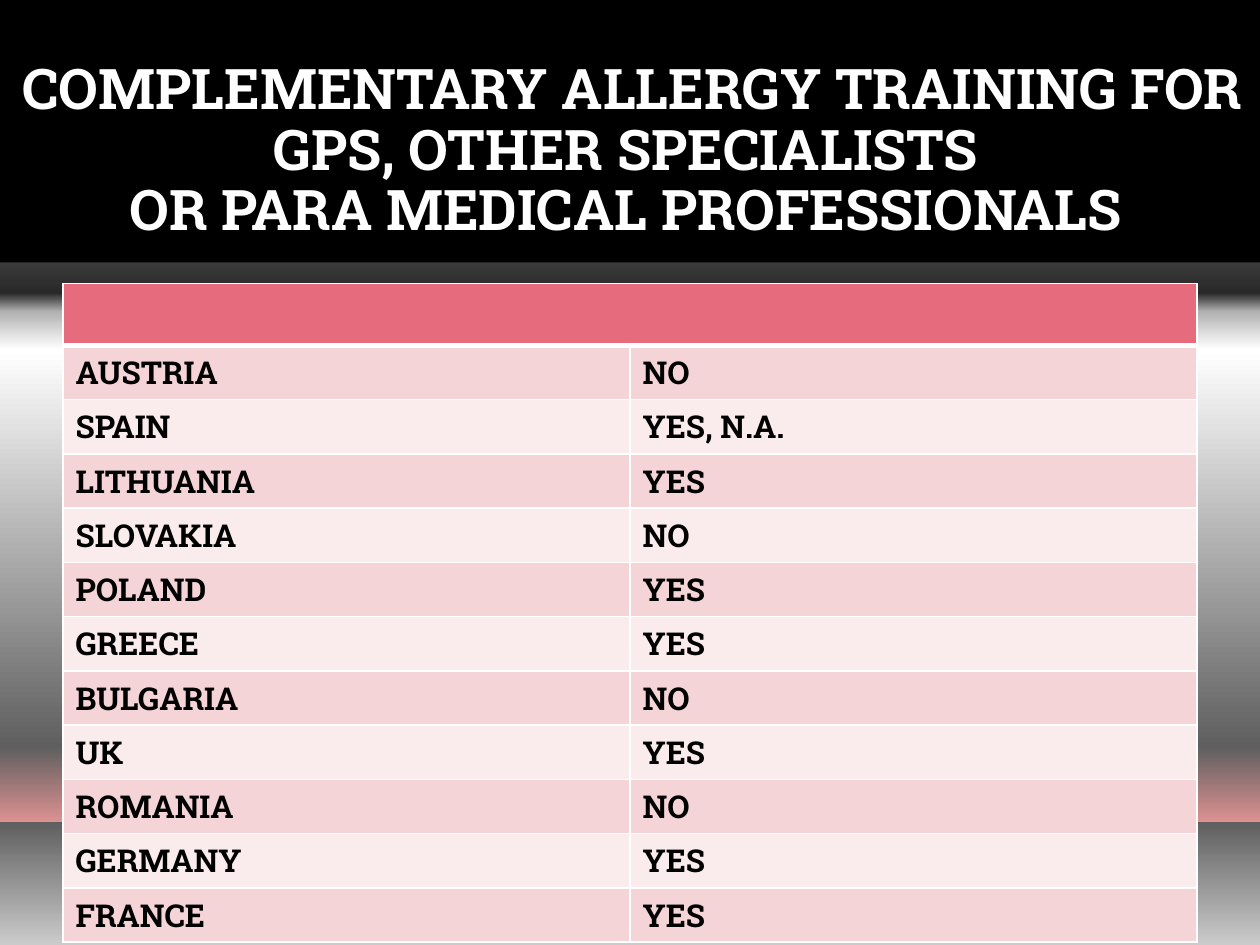
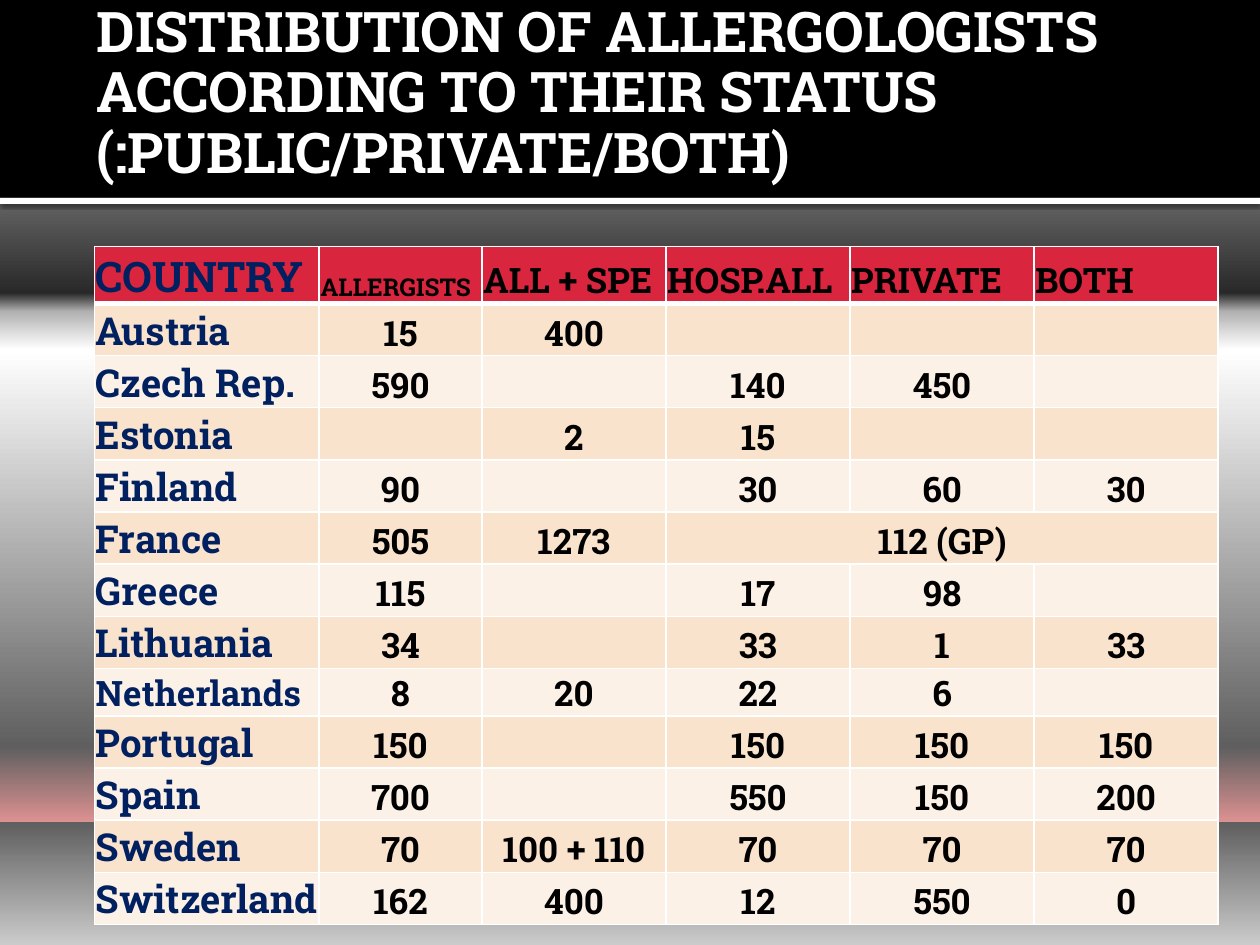
"""Build two slides on allergy training and allergologist numbers in Europe."""
import dataclasses
import typing

import lxml.etree
import pptx
import pptx.dml.color
import pptx.enum.shapes
import pptx.enum.text
import pptx.oxml.ns
import pptx.util

Pt = pptx.util.Pt
ALIGN = pptx.enum.text.PP_ALIGN
ANCHOR = pptx.enum.text.MSO_ANCHOR
FONT = "Roboto Slab"
BLACK, WHITE, NAVY = "000000", "FFFFFF", "002060"
BACKGROUND_STOPS = [
    (0, "CBCBCB"), (13, "5F5F5F"), (13, "DD9191"), (21, "5F5F5F"), (63, "FFFFFF"),
    (67, "B2B2B2"), (69, "292929"), (82, "777777"), (100, "EAEAEA"),
]
TITLE_FRAME = {
    "word_wrap": True, "auto_size": pptx.enum.text.MSO_AUTO_SIZE.NONE,
    "vertical_anchor": ANCHOR.MIDDLE, "margin_left": Pt(7.2), "margin_right": Pt(3.6),
    "margin_top": Pt(3.6), "margin_bottom": Pt(3.6),
}
ROOMY_CELL = {"vertical_anchor": ANCHOR.TOP}
TIGHT_CELL = {
    "vertical_anchor": ANCHOR.BOTTOM, "margin_left": Pt(0.7), "margin_right": Pt(0.7),
    "margin_top": Pt(0.7), "margin_bottom": Pt(0),
}


@dataclasses.dataclass(frozen=True)
class Box:
    """A rectangle in points."""
    left: float
    top: float
    width: float
    height: float

    def lengths(self) -> dict[str, int]:
        return {name: Pt(value) for name, value in dataclasses.asdict(self).items()}


@dataclasses.dataclass(frozen=True)
class Band:
    """A plain rectangle shared by all slides."""
    box: Box
    fill: str
    shadow: bool = False


@dataclasses.dataclass(frozen=True)
class Look:
    """The size, colour and alignment of one cell's text."""
    size: float
    color: str = BLACK
    align: typing.Optional[ALIGN] = None


@dataclasses.dataclass(frozen=True)
class Grid:
    """A table with a header row and striped body rows."""
    box: Box
    columns: list[float]
    heights: list[float]
    rows: list[list[str]]
    header_fill: str
    stripes: tuple[str, str]
    cell_format: dict
    look: typing.Callable[[int, int, str], Look]
    merges: list[tuple[int, int, int]]


BANDS = [
    Band(Box(0, 113, 720, 3.6), WHITE, shadow=True),
    Band(Box(0, 0, 720, 113), BLACK),
]
TRAINING = [
    ["", ""], ["AUSTRIA", "NO"], ["SPAIN", "YES, N.A."], ["LITHUANIA", "YES"],
    ["SLOVAKIA", "NO"], ["POLAND", "YES"], ["GREECE", "YES"], ["BULGARIA", "NO"],
    ["UK", "YES"], ["ROMANIA", "NO"], ["GERMANY", "YES"], ["FRANCE", "YES"],
]
STATUS = [
    ["COUNTRY", "ALLERGISTS", "ALL + SPE", "HOSP.ALL", "PRIVATE", "BOTH"],
    ["Austria", "15", "400", "", "", ""],
    ["Czech Rep.", "590", "", "140", "450", ""],
    ["Estonia", "", "2", "15", "", ""],
    ["Finland", "90", "", "30", "60", "30"],
    ["France", "505", "1273", "112 (GP)", "", ""],
    ["Greece", "115", "", "17", "98", ""],
    ["Lithuania", "34", "", "33", "1", "33"],
    ["Netherlands", "8", "20", "22", "6", ""],
    ["Portugal", "150", "", "150", "150", "150"],
    ["Spain", "700", "", "550", "150", "200"],
    ["Sweden", "70", "100 + 110", "70", "70", "70"],
    ["Switzerland", "162", "400", "12", "550", "0"],
]


def rgb(color: str) -> pptx.dml.color.RGBColor:
    """Turn a hex string into a colour."""
    return pptx.dml.color.RGBColor.from_string(color)


def assign(target: typing.Any, values: dict) -> None:
    """Set every named attribute on the target."""
    for name, value in values.items():
        setattr(target, name, value)


def add_child(parent: typing.Any, tag: str, **attributes: typing.Any) -> typing.Any:
    """Append a drawing element with the given attributes."""
    texts = {name: str(value) for name, value in attributes.items()}
    return lxml.etree.SubElement(parent, pptx.oxml.ns.qn(tag), texts)


def write(para: typing.Any, text: str, look: Look) -> None:
    """Add one bold run to a paragraph."""
    span = para.add_run()
    span.text = text
    assign(span.font, {"name": FONT, "size": Pt(look.size), "bold": True})
    span.font.color.rgb = rgb(look.color)
    para.alignment = look.align


def paint_background(layout: typing.Any) -> None:
    """Give the layout its vertical metallic gradient."""
    fill = layout.background.fill
    fill.gradient()
    fill.gradient_angle = 90
    stops = next(layout.element.iter(pptx.oxml.ns.qn("a:gsLst")))
    for stop in list(stops):
        stops.remove(stop)
    for percent, color in BACKGROUND_STOPS:
        add_child(add_child(stops, "a:gs", pos=percent * 1000), "a:srgbClr", val=color)


def add_bands(page: typing.Any, layout: typing.Any) -> None:
    """Draw the bands and place them at the back of the layout."""
    for position, band in enumerate(BANDS, start=2):
        shape = page.shapes.add_shape(
            pptx.enum.shapes.MSO_SHAPE.RECTANGLE, **band.box.lengths())
        shape.fill.solid()
        shape.fill.fore_color.rgb = rgb(band.fill)
        shape.line.fill.background()
        shape.shadow.inherit = False
        if band.shadow:
            effects = shape.element.spPr.find(pptx.oxml.ns.qn("a:effectLst"))
            shadow = add_child(effects, "a:outerShdw", blurRad=Pt(2.5), dist=Pt(0.8),
                               dir=5400000, algn="t", rotWithShape=0)
            add_child(add_child(shadow, "a:srgbClr", val=BLACK), "a:alpha", val=60000)
        layout.shapes.element.insert(position, shape.element)


def set_title(page: typing.Any, box: Box, lines: list[str], align: ALIGN) -> None:
    """Move, fill in and format the title placeholder."""
    title = page.shapes.title
    assign(title, box.lengths())
    frame = title.text_frame
    assign(frame, TITLE_FRAME)
    for number, line in enumerate(lines):
        para = frame.add_paragraph() if number else frame.paragraphs[0]
        para.line_spacing = 0.9
        write(para, line, Look(32, WHITE, align))


def add_borders(properties: typing.Any, row: int) -> None:
    """Draw white cell borders, with a thick line under the header."""
    widths = {"L": 1, "R": 1, "T": 3 if row == 1 else 1, "B": 1 if row else 3}
    for position, (side, width) in enumerate(widths.items()):
        line = add_child(properties, f"a:ln{side}", w=Pt(width))
        add_child(add_child(line, "a:solidFill"), "a:srgbClr", val=WHITE)
        properties.insert(position, line)


def add_grid(page: typing.Any, grid: Grid) -> None:
    """Draw a table from its description."""
    frame = page.shapes.add_table(len(grid.rows), len(grid.columns), **grid.box.lengths())
    table = frame.table
    for column, width in zip(table.columns, grid.columns):
        column.width = Pt(width)
    for row, height in zip(table.rows, grid.heights):
        row.height = Pt(height)
    elements = frame.element.iter(pptx.oxml.ns.qn("a:tc"))
    for index, (cell, element) in enumerate(zip(table.iter_cells(), elements)):
        row, column = divmod(index, len(grid.columns))
        text = grid.rows[row][column]
        assign(cell, grid.cell_format)
        cell.fill.solid()
        cell.fill.fore_color.rgb = rgb(
            grid.stripes[(row - 1) % 2] if row else grid.header_fill)
        add_borders(element.get_or_add_tcPr(), row)
        if text:
            write(cell.text_frame.paragraphs[0], text, grid.look(row, column, text))
    for row, first, last in grid.merges:
        table.cell(row, first).merge(table.cell(row, last))


def training_look(row: int, column: int, text: str) -> Look:
    """Style the training table's text."""
    return Look(18)


def status_look(row: int, column: int, text: str) -> Look:
    """Style the status table's headings, countries and numbers."""
    if row == 0:
        return Look({0: 24, 1: 14}.get(column, 20), BLACK if column else NAVY)
    if column == 0:
        return Look(20 if text == "Netherlands" else 22, NAVY)
    return Look(20, BLACK, ALIGN.CENTER)


def main() -> None:
    """Build and save the deck."""
    deck = pptx.Presentation()
    assign(deck, {"slide_width": Pt(720), "slide_height": Pt(540)})
    layout = deck.slide_layouts.get_by_name("Title Only")
    paint_background(layout)

    training = deck.slides.add_slide(layout)
    add_bands(training, layout)
    set_title(training, Box(0, 24, 720, 126), [
        "COMPLEMENTARY ALLERGY TRAINING FOR GPS, OTHER SPECIALISTS ",
        "OR PARA MEDICAL PROFESSIONALS ",
    ], ALIGN.CENTER)
    training.shapes.title.fill.solid()
    training.shapes.title.fill.fore_color.rgb = rgb(BLACK)
    add_grid(training, Grid(
        Box(36, 162, 648, 376), [324, 324], [35.3] + [31] * 11, TRAINING,
        "E66C7D", ("F5D4D7", "FAEBEC"), ROOMY_CELL, training_look, [(0, 0, 1)]))

    status = deck.slides.add_slide(layout)
    set_title(status, Box(48, 0, 654, 108), [
        "DISTRIBUTION OF ALLERGOLOGISTS ACCORDING TO THEIR STATUS (:PUBLIC/PRIVATE/BOTH)",
    ], ALIGN.LEFT)
    add_grid(status, Grid(
        Box(54, 141, 642, 387), [128.4, 93] + [105.2] * 4,
        [32.4] + [29.8] * 7 + [27] + [29.8] * 4, STATUS,
        "D9253E", ("F9E3CC", "FCF1E7"), TIGHT_CELL, status_look, [(5, 3, 5)]))
    deck.save("out.pptx")


if __name__ == "__main__":
    main()
